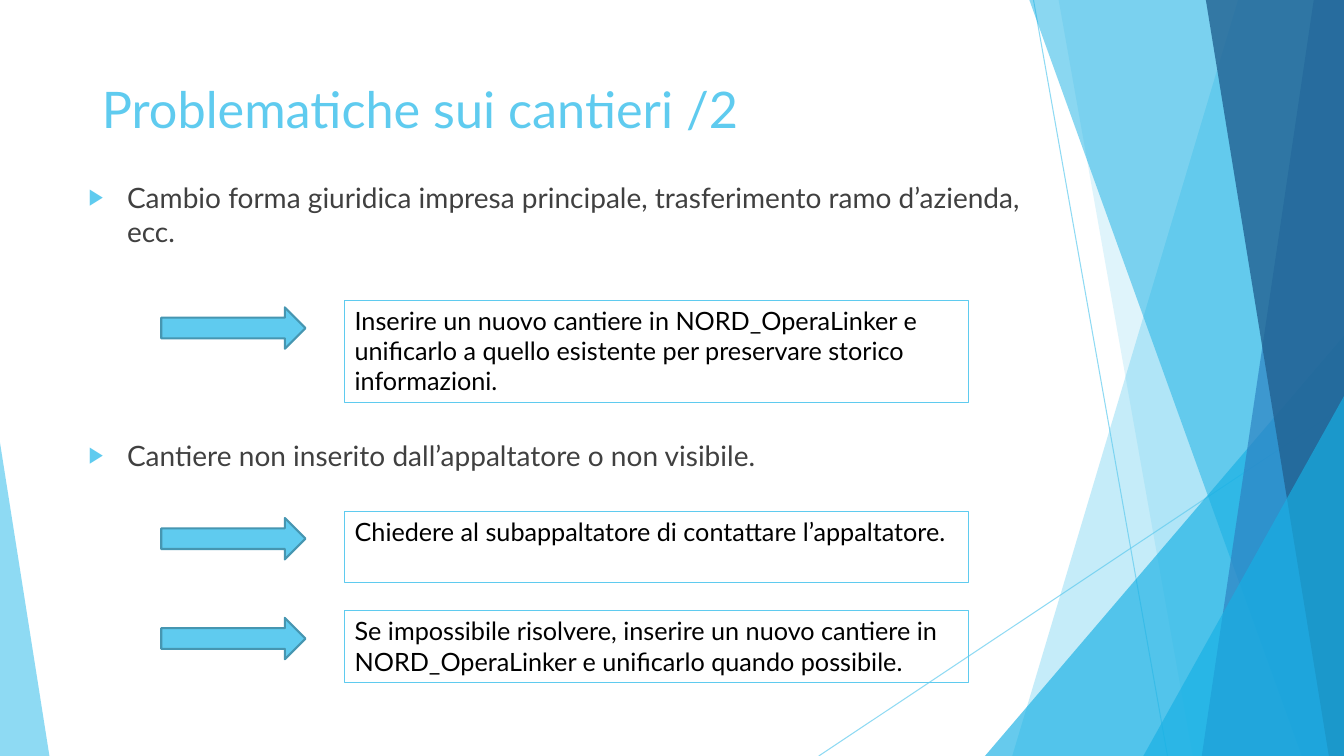
import pptx
import pptx.util
import pptx.dml.color
import pptx.enum.shapes
import pptx.enum.text
import pptx.oxml
import pptx.oxml.ns

W, H = 13.33, 7.5
FONT = "Lato"
COLORS = {
    "sky": "5FCBEF", "cyan": "17B0E4", "blue": "2E83C3", "navy": "226292",
    "edge": "4696B1", "grey": "404040", "black": "000000",
}
SHAPE = pptx.enum.shapes.MSO_SHAPE
qn = pptx.oxml.ns.qn


def px(share):
    """Length for a percentage of the slide's width."""
    return pptx.util.Inches(W * share / 100)


def py(share):
    """Length for a percentage of the slide's height."""
    return pptx.util.Inches(H * share / 100)


def frame(x, y, w, h):
    return px(x), py(y), px(w), py(h)


def rgb(name):
    return pptx.dml.color.RGBColor.from_string(COLORS[name])


def sub(parent, tag, **attrs):
    el = parent.makeelement(qn(tag), attrs)
    parent.append(el)
    return el


def paint(sp, fill=None, line=None, width=0.75, alpha=100):
    if fill:
        sp.fill.solid()
        sp.fill.fore_color.rgb = rgb(fill)
    else:
        sp.fill.background()
    if line:
        sp.line.color.rgb = rgb(line)
        sp.line.width = pptx.util.Pt(width)
    else:
        sp.line.fill.background()
    sp.shadow.inherit = False
    fade(sp, alpha)


def fade(sp, alpha):
    if alpha < 100:
        for clr in list(sp._element.iter(qn("a:srgbClr"))):
            sub(clr, "a:alpha", val=str(alpha * 1000))


def write(p, text, size, color):
    r = p.add_run()
    r.text = text
    for name, value in {"name": FONT, "size": pptx.util.Pt(size)}.items():
        setattr(r.font, name, value)
    r.font.color.rgb = rgb(color)
    p.alignment = pptx.enum.text.PP_ALIGN.LEFT


def format_frame(sp):
    settings = {
        "word_wrap": True,
        "auto_size": pptx.enum.text.MSO_AUTO_SIZE.NONE,
        "vertical_anchor": pptx.enum.text.MSO_ANCHOR.TOP,
    }
    for name, value in settings.items():
        setattr(sp.text_frame, name, value)
    return sp.text_frame


def ray(s, x1, y1, x2, y2):
    c = s.shapes.add_connector(pptx.enum.shapes.MSO_CONNECTOR.STRAIGHT,
                               px(x1), py(y1), px(x2), py(y2))
    c.line.color.rgb = rgb("sky")
    c.line.width = pptx.util.Pt(0.75)
    fade(c, 70)
    sub(c._element.spPr, "a:effectLst")


def facet(s, top, bottom, color, alpha):
    """Full-height panel with a slanted left side, reaching the right edge."""
    fb = s.shapes.build_freeform(px(top), 0)
    fb.add_line_segments([(px(100), 0), (px(100), py(100)), (px(bottom), py(100))])
    paint(fb.convert_to_shape(), color, alpha=alpha)


def corner(s, x, width, height, apex, color, alpha):
    """Triangle standing on the bottom edge."""
    sp = s.shapes.add_shape(SHAPE.ISOSCELES_TRIANGLE,
                            *frame(x, 100 - height, width, height))
    sp.adjustments[0] = apex
    paint(sp, color, alpha=alpha)


def add_backdrop(s):
    ray(s, 76.9, 0, 86.87, 100)
    ray(s, 100, 53.73, 60.92, 100)
    facet(s, 92.12, 75.32, "sky", 36)
    facet(s, 78.77, 88.75, "sky", 20)
    corner(s, 73.29, 26.71, 55.6, 1, "cyan", 66)
    facet(s, 76.59, 96.85, "cyan", 50)
    facet(s, 97.75, 89.42, "blue", 70)
    facet(s, 89.72, 98.87, "navy", 80)
    corner(s, 85.07, 14.93, 47.6, 1, "cyan", 66)
    corner(s, 0, 3.68, 41.47, 0, "sky", 70)


def place(s, sp, box):
    """Move a placeholder to the box and in front of the backdrop."""
    sp.left, sp.top, sp.width, sp.height = frame(*box)
    s.shapes._spTree.append(sp._element)


def add_title(s, box, text):
    place(s, s.shapes.title, box)
    write(format_frame(s.shapes.title).paragraphs[0], text, 36, "sky")


def add_bullets(s, box, items):
    """Bullets given as (text, space before in points)."""
    body = s.placeholders[1]
    place(s, body, box)
    tf = format_frame(body)
    for i, (text, gap) in enumerate(items):
        p = tf.add_paragraph() if i else tf.paragraphs[0]
        write(p, text, 20, "grey")
        p.space_before = pptx.util.Pt(gap)
        pPr = p._p.get_or_add_pPr()
        indent = pptx.util.Inches(0.38)
        pPr.set("marL", str(indent))
        pPr.set("indent", str(-indent))
        sub(sub(pPr, "a:buClr"), "a:srgbClr", val=COLORS["sky"])
        sub(pPr, "a:buSzPct", val="80000")
        sub(pPr, "a:buChar", char="▶")


def add_remedy(s, box, text):
    """Arrow at the left of the box, outlined answer filling the rest."""
    x, y, w, h = box
    arrow = s.shapes.add_shape(SHAPE.RIGHT_ARROW, *frame(x, y + 0.93, 10.73, 5.47))
    paint(arrow, "sky", "edge", 1.5)
    offset = 13.65
    answer = s.shapes.add_shape(SHAPE.RECTANGLE, *frame(x + offset, y, w - offset, h))
    paint(answer, line="sky")
    write(format_frame(answer).paragraphs[0], text, 18, "black")


def main():
    prs = pptx.Presentation()
    prs.slide_width, prs.slide_height = px(100), py(100)
    s = prs.slides.add_slide(prs.slide_layouts[1])
    add_backdrop(s)
    add_bullets(s, (5.85, 23.2, 72.47, 68.67), [
        ("Cambio forma giuridica impresa principale, trasferimento ramo d’azienda, ecc.", 0),
        ("Cantiere non inserito dall’appaltatore o non visibile.", 136),
    ])
    add_title(s, (6.83, 9.6, 87.7, 13.6), "Problematiche sui cantieri /2")
    remedies = [
        (39.73, 13.47, "Inserire un nuovo cantiere in NORD_OperaLinker e unificarlo "
                       "a quello esistente per preservare storico informazioni."),
        (67.6, 9.47, "Chiedere al subappaltatore di contattare l’appaltatore."),
        (80.8, 9.47, "Se impossibile risolvere, inserire un nuovo cantiere in "
                     "NORD_OperaLinker e unificarlo quando possibile."),
    ]
    for top, height, text in remedies:
        add_remedy(s, (12, top, 60.08, height), text)
    prs.save("out.pptx")


if __name__ == "__main__":
    main()
